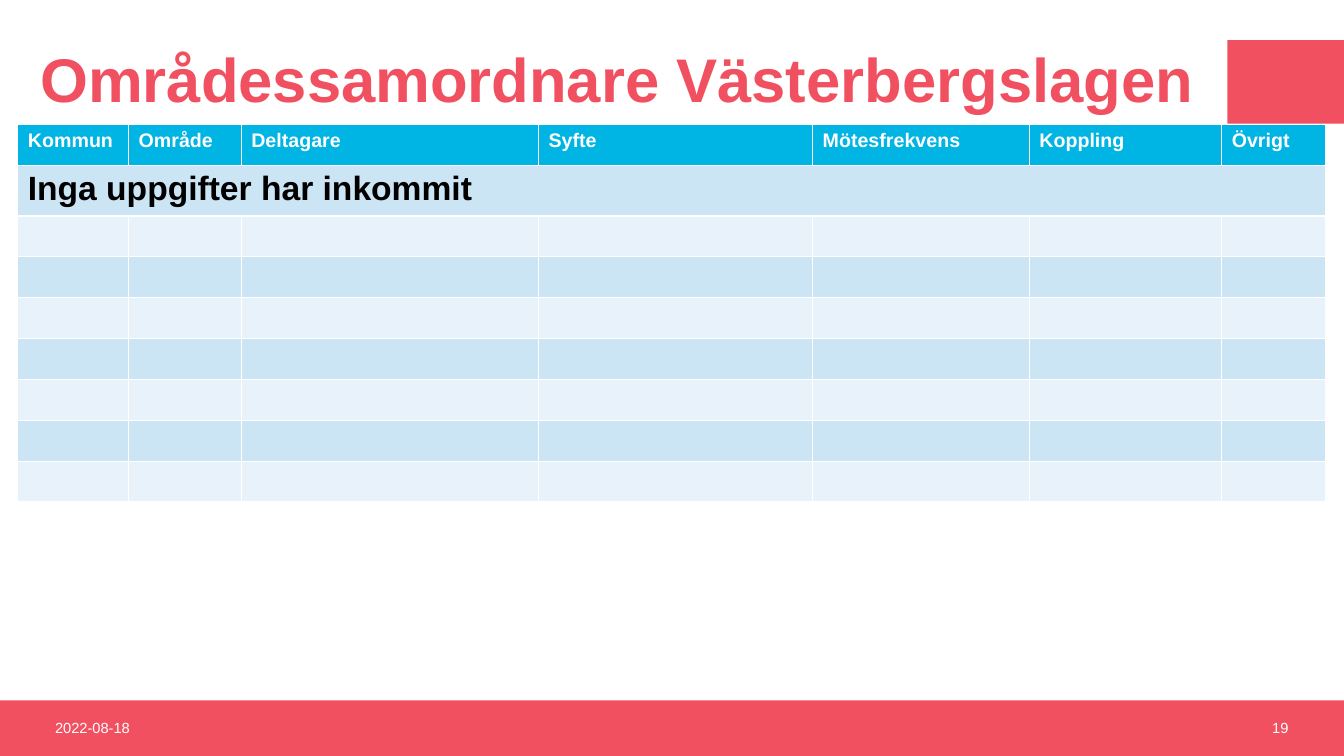
from pptx import Presentation
from pptx.dml.color import RGBColor
from pptx.enum.shapes import MSO_SHAPE
from pptx.enum.text import MSO_ANCHOR, MSO_AUTO_SIZE, PP_ALIGN
from pptx.util import Cm, Pt

RECTANGLE = MSO_SHAPE.RECTANGLE
MIDDLE = MSO_ANCHOR.MIDDLE
NO_AUTOFIT = MSO_AUTO_SIZE.NONE
LEFT, RIGHT = PP_ALIGN.LEFT, PP_ALIGN.RIGHT

CORAL = RGBColor(0xF1, 0x50, 0x60)
CYAN = RGBColor(0x00, 0xB4, 0xE4)
BAND_DARK = RGBColor(0xCC, 0xE5, 0xF5)
BAND_LIGHT = RGBColor(0xE7, 0xF2, 0xFA)
WHITE = RGBColor(0xFF, 0xFF, 0xFF)
BLACK = RGBColor(0x00, 0x00, 0x00)

HEADERS = ["Kommun", "Område", "Deltagare", "Syfte", "Mötesfrekvens", "Koppling", "Övrigt"]
COLUMN_WIDTHS = [2.79, 2.84, 7.49, 6.91, 5.46, 4.85, 2.62]
ROW_COUNT = 9
ROW_HEIGHT = 1.03


def write(frame, text, size, color, bold=False, align=LEFT):
    para = frame.paragraphs[0]
    para.text = text
    para.alignment = align
    para.font.name = "Arial"
    para.font.size = Pt(size)
    para.font.bold = bold
    para.font.color.rgb = color
    return para


deck = Presentation()
deck.slide_width = Cm(33.87)
deck.slide_height = Cm(19.05)
page = deck.slides.add_slide(deck.slide_layouts[5])

for left, top, width, height in [(0, 17.65, 33.87, 1.4), (30.93, 1.01, 2.94, 2.11)]:
    block = page.shapes.add_shape(RECTANGLE, Cm(left), Cm(top), Cm(width), Cm(height))
    block.shadow.inherit = False
    block.fill.solid()
    block.fill.fore_color.rgb = CORAL
    block.line.fill.background()

title = page.shapes.title
title.left, title.top, title.width, title.height = Cm(0.76), Cm(0.41), Cm(30.2), Cm(3.35)
title.text_frame.auto_size = NO_AUTOFIT
title.text_frame.vertical_anchor = MIDDLE
heading = write(title.text_frame, "Områdessamordnare Västerbergslagen", 44, CORAL, bold=True)
heading.line_spacing = 0.9

for text, left, align in [("2022-08-18", 1.14, LEFT), ("19", 25.1, RIGHT)]:
    box = page.shapes.add_textbox(Cm(left), Cm(17.65), Cm(7.62), Cm(1.37))
    box.text_frame.word_wrap = True
    box.text_frame.vertical_anchor = MIDDLE
    write(box.text_frame, text, 10.5, WHITE, align=align)

table = page.shapes.add_table(
    ROW_COUNT, len(HEADERS), Cm(0.45), Cm(3.14), Cm(sum(COLUMN_WIDTHS)), Cm(ROW_COUNT * ROW_HEIGHT)
).table
for column, width in zip(table.columns, COLUMN_WIDTHS):
    column.width = Cm(width)
for index, row in enumerate(table.rows):
    row.height = Cm(ROW_HEIGHT)
    band = BAND_DARK if index % 2 else BAND_LIGHT
    for cell in row.cells:
        cell.fill.solid()
        cell.fill.fore_color.rgb = band if index else CYAN

for index, header in enumerate(HEADERS):
    write(table.cell(0, index).text_frame, header, 14, WHITE, bold=True)
table.cell(1, 0).merge(table.cell(1, len(HEADERS) - 1))
write(table.cell(1, 0).text_frame, "Inga uppgifter har inkommit", 24, BLACK, bold=True)

deck.save("out.pptx")
